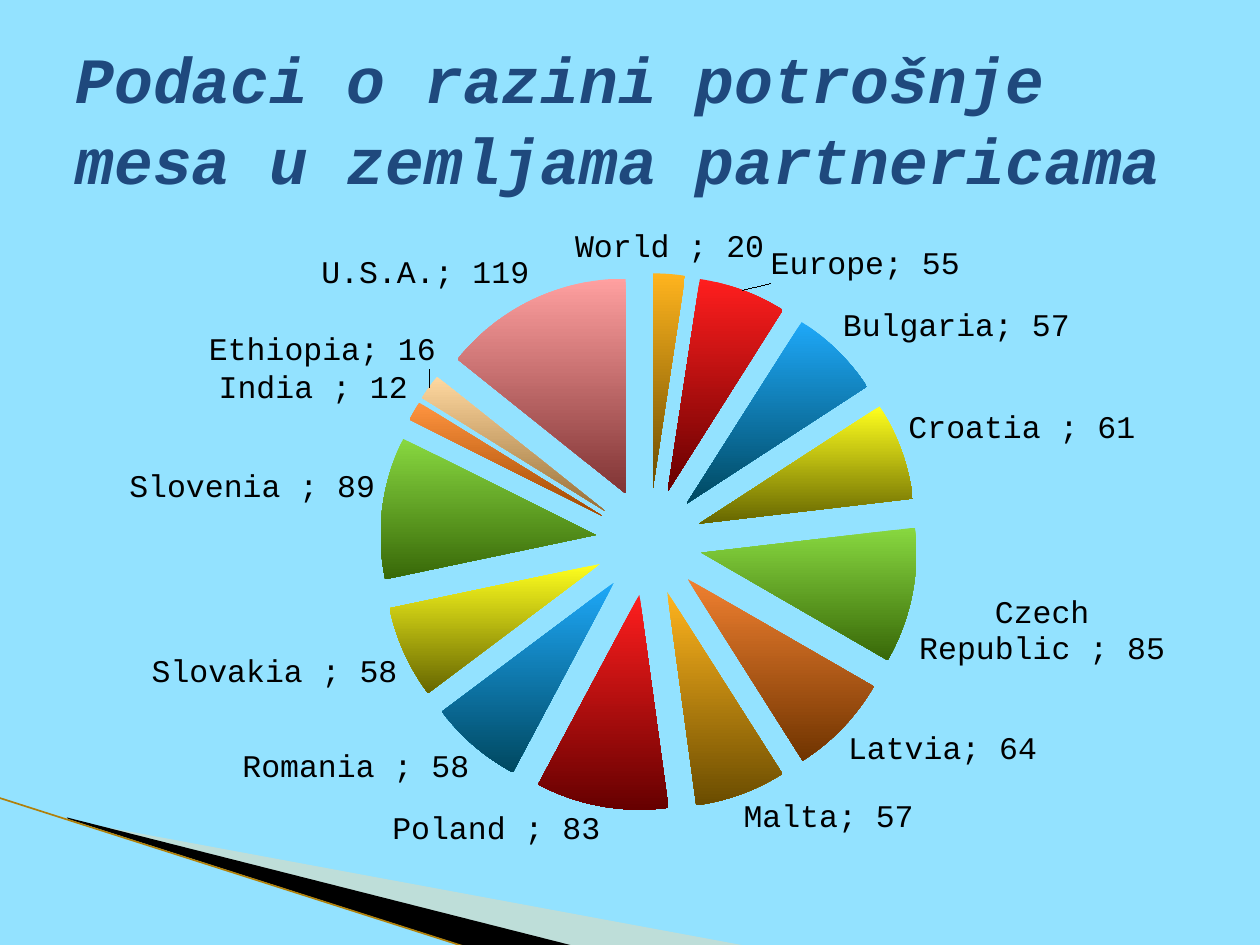
"""Build a slide with an exploded pie chart of meat consumption by country."""
from typing import NamedTuple

from lxml.etree import SubElement
from pptx import Presentation
from pptx.chart.data import CategoryChartData
from pptx.dml.color import RGBColor
from pptx.enum.chart import XL_CHART_TYPE as ChartType, XL_LABEL_POSITION as LabelPosition
from pptx.enum.shapes import MSO_CONNECTOR as Connector
from pptx.enum.text import MSO_ANCHOR as Anchor, MSO_AUTO_SIZE as AutoSize, PP_ALIGN as Align
from pptx.oxml import parse_xml
from pptx.oxml.ns import nsdecls, qn
from pptx.util import Cm, Pt

FONT = "Courier New"
SKY = RGBColor(0x93, 0xE2, 0xFF)
NAVY = RGBColor(0x1F, 0x49, 0x7D)
BLACK = RGBColor(0, 0, 0)
CREAM = RGBColor(0xFF, 0xD9, 0xA2)
GOLD = RGBColor(0xB0, 0x80, 0x0A)


class Shade(NamedTuple):
    top: RGBColor
    bottom: RGBColor


class Country(NamedTuple):
    name: str
    consumption: int
    shade: Shade
    label_shift: tuple[float, float] = (0, 0)


class Wedge(NamedTuple):
    corners: list[tuple[float, float]]
    color: RGBColor
    opacity: int


AMBER = Shade(RGBColor(0xFF, 0xB4, 0x1E), RGBColor(0x6A, 0x4C, 0x00))
RED = Shade(RGBColor(0xFF, 0x1E, 0x1E), RGBColor(0x66, 0x00, 0x00))
BLUE = Shade(RGBColor(0x1E, 0xA8, 0xF8), RGBColor(0x00, 0x48, 0x60))
YELLOW = Shade(RGBColor(0xFF, 0xFF, 0x1E), RGBColor(0x66, 0x66, 0x00))
GREEN = Shade(RGBColor(0x88, 0xD8, 0x40), RGBColor(0x38, 0x68, 0x08))
RUST = Shade(RGBColor(0xF0, 0x80, 0x30), RGBColor(0x70, 0x34, 0x00))
ORANGE = Shade(RGBColor(0xFF, 0x94, 0x40), RGBColor(0xA0, 0x48, 0x00))
SAND = Shade(RGBColor(0xFF, 0xD8, 0xA0), RGBColor(0x98, 0x70, 0x38))
ROSE = Shade(RGBColor(0xFF, 0xA0, 0xA0), RGBColor(0x80, 0x34, 0x34))

COUNTRIES = [
    Country("World ", 20, AMBER),
    Country("Europe", 55, RED, (0.02, 0)),
    Country("Bulgaria", 57, BLUE),
    Country("Croatia ", 61, YELLOW),
    Country("Czech Republic ", 85, GREEN),
    Country("Latvia", 64, RUST),
    Country("Malta", 57, AMBER),
    Country("Poland ", 83, RED),
    Country("Romania ", 58, BLUE),
    Country("Slovakia ", 58, YELLOW),
    Country("Slovenia ", 89, GREEN),
    Country("India ", 12, ORANGE),
    Country("Ethiopia", 16, SAND, (0.01, -0.02)),
    Country("U.S.A.", 119, ROSE),
]
WEDGES = [
    Wedge([(1.4, 16.54), (15.11, 19.08), (11.58, 19.08), (1.4, 16.51)], CREAM, 40),
    Wedge([(1.35, 16.48), (11.61, 19.08), (9.45, 19.1), (1.37, 16.51)], BLACK, 100),
]
PLOT_AREA = {"x": 0.3, "y": 0.09, "w": 0.43, "h": 0.82}


def draw_wedge(slide, wedge: Wedge) -> None:
    start, *others = [(Cm(x), Cm(y)) for x, y in wedge.corners]
    outline = slide.shapes.build_freeform(*start)
    outline.add_line_segments(others)
    shape = outline.convert_to_shape()
    shape.shadow.inherit = False
    shape.line.fill.background()
    shape.fill.solid()
    shape.fill.fore_color.rgb = wedge.color
    if wedge.opacity < 100:
        color = shape.fill._xPr.find(".//" + qn("a:srgbClr"))
        SubElement(color, qn("a:alpha"), val=str(wedge.opacity * 1000))


def draw_edge(slide) -> None:
    edge = slide.shapes.add_connector(Connector.STRAIGHT, Cm(-0.03), Cm(16.08), Cm(9.42), Cm(19.1))
    edge.line.color.rgb = GOLD
    edge.line.width = Pt(0.95)
    SubElement(edge._element.spPr, qn("a:effectLst"))


def write_title(slide) -> None:
    title = slide.shapes.title
    title.left, title.top, title.width, title.height = Cm(1.27), Cm(0.76), Cm(22.86), Cm(3.18)
    frame = title.text_frame
    frame.text = "Podaci o razini potrošnje mesa u zemljama partnericama"
    frame.word_wrap = True
    frame.auto_size = AutoSize.NONE
    frame.vertical_anchor = Anchor.MIDDLE
    heading = frame.paragraphs[0]
    heading.alignment = Align.LEFT
    heading.line_spacing = 1.04
    font = heading.runs[0].font
    font.name, font.size = FONT, Pt(36.9)
    font.bold = font.italic = True
    font.color.rgb = NAVY


def place_plot(chart) -> None:
    plot_area = chart._chartSpace.chart.plotArea
    for old in plot_area.findall(qn("c:layout")):
        plot_area.remove(old)
    sizes = "".join(f'<c:{side} val="{share}"/>' for side, share in PLOT_AREA.items())
    plot_area.insert(0, parse_xml(
        f'<c:layout {nsdecls("c")}><c:manualLayout><c:layoutTarget val="inner"/>'
        f'<c:xMode val="edge"/><c:yMode val="edge"/>{sizes}</c:manualLayout></c:layout>'))


def label_slices(series, countries: list[Country]) -> None:
    labels = series.data_labels
    labels.show_category_name = labels.show_value = True
    labels.show_percentage = labels.show_legend_key = False
    labels.position = LabelPosition.OUTSIDE_END
    separator = parse_xml(f'<c:separator {nsdecls("c")}>; </c:separator>')
    last_flag = labels._element.find(qn("c:showBubbleSize"))
    if last_flag is None:
        last_flag = labels._element.find(qn("c:showPercent"))
    last_flag.addnext(separator)

    shifted = [(index, country.label_shift) for index, country in enumerate(countries)
               if any(country.label_shift)]
    for order, (index, (right, down)) in enumerate(shifted):
        labels._element.insert(order, parse_xml(
            f'<c:dLbl {nsdecls("c")}><c:idx val="{index}"/><c:layout><c:manualLayout>'
            f'<c:x val="{right}"/><c:y val="{down}"/></c:manualLayout></c:layout>'
            '<c:dLblPos val="outEnd"/><c:showLegendKey val="0"/><c:showVal val="1"/>'
            '<c:showCatName val="1"/><c:showSerName val="0"/><c:showPercent val="0"/>'
            '<c:showBubbleSize val="0"/><c:separator>; </c:separator></c:dLbl>'))


def draw_pie(slide, countries: list[Country]) -> None:
    consumption = CategoryChartData()
    consumption.categories = [country.name for country in countries]
    consumption.add_series("Series 1", [country.consumption for country in countries])
    chart = slide.shapes.add_chart(
        ChartType.PIE, Cm(0), Cm(4.32), Cm(25.4), Cm(13.21), consumption).chart
    chart.has_title = chart.has_legend = False
    chart.font.name, chart.font.size = FONT, Pt(18)
    chart.font.color.rgb = BLACK
    place_plot(chart)

    plot = chart.plots[0]
    plot.vary_by_categories = True
    series = plot.series[0]
    explosion = parse_xml(f'<c:explosion {nsdecls("c")} val="25"/>')
    series._element.find(qn("c:tx")).addnext(explosion)
    for index, country in enumerate(countries):
        fill = series.points[index].format.fill
        fill.gradient()
        fill.gradient_angle = 270
        for stop, color in zip(fill.gradient_stops, country.shade):
            stop.color.rgb = color
    label_slices(series, countries)


def main() -> None:
    deck = Presentation()
    deck.slide_width, deck.slide_height = Cm(25.4), Cm(19.05)
    slide = deck.slides.add_slide(deck.slide_layouts[5])
    slide.background.fill.solid()
    slide.background.fill.fore_color.rgb = SKY
    for wedge in WEDGES:
        draw_wedge(slide, wedge)
    draw_edge(slide)
    write_title(slide)
    draw_pie(slide, COUNTRIES)
    deck.save("out.pptx")


if __name__ == "__main__":
    main()
